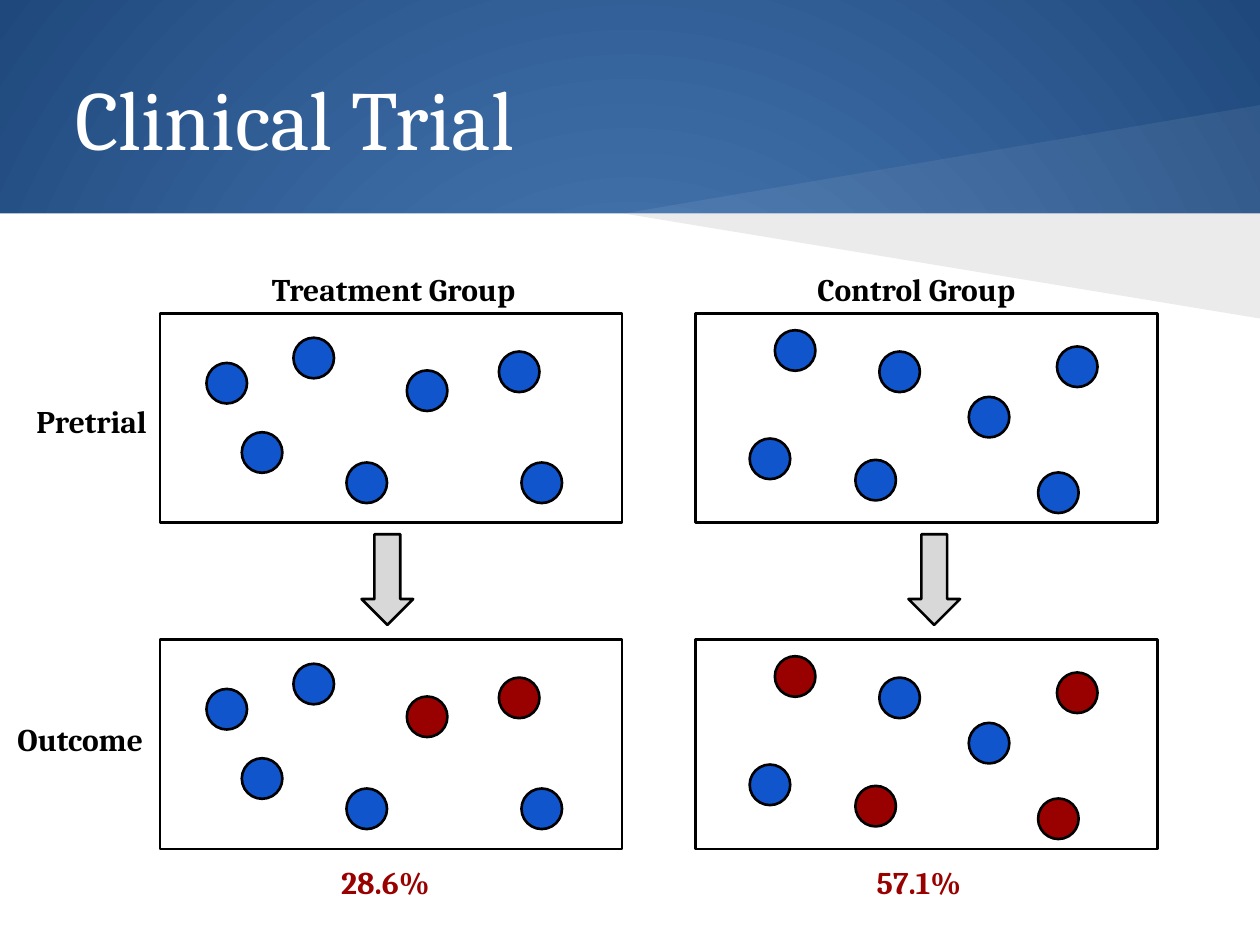
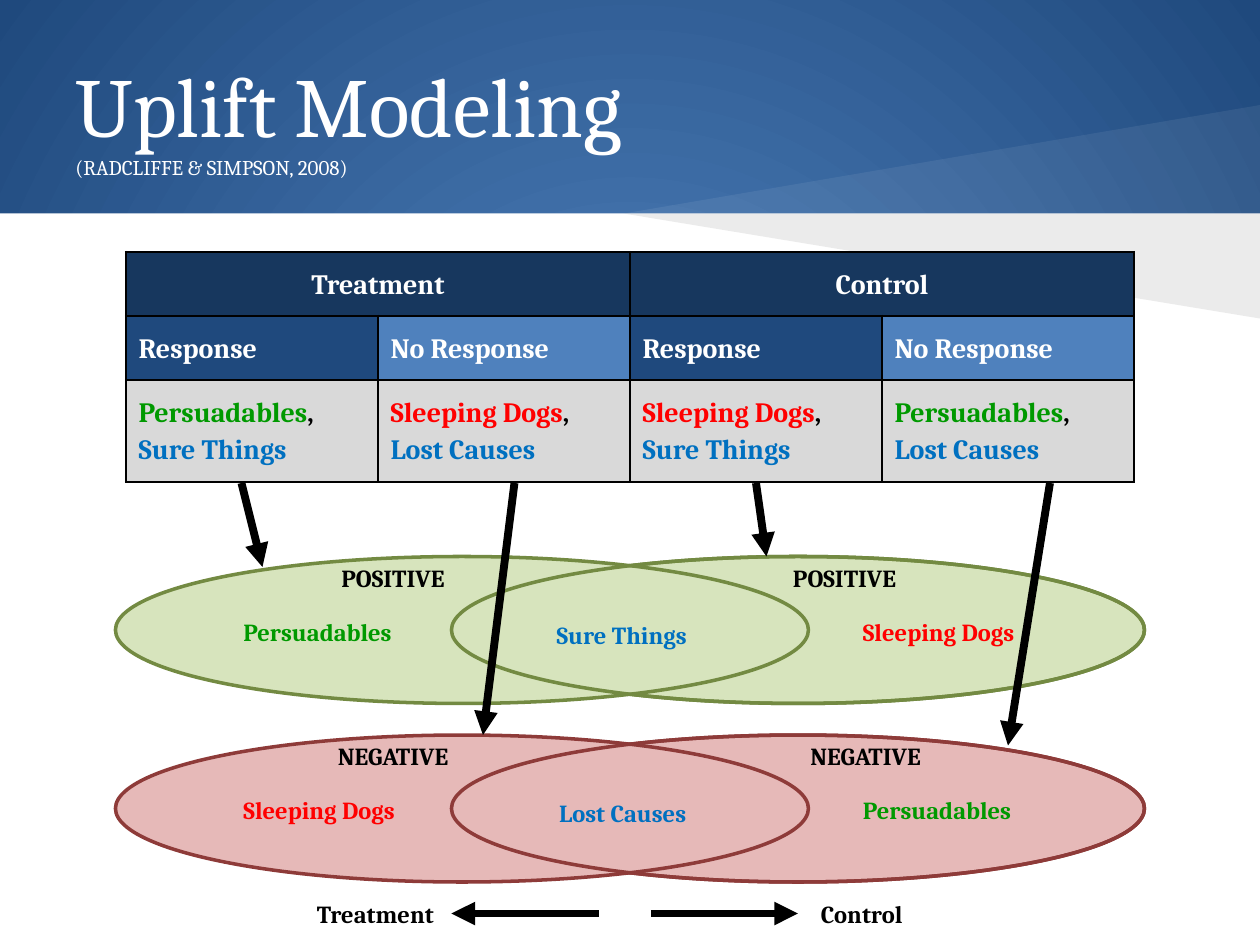
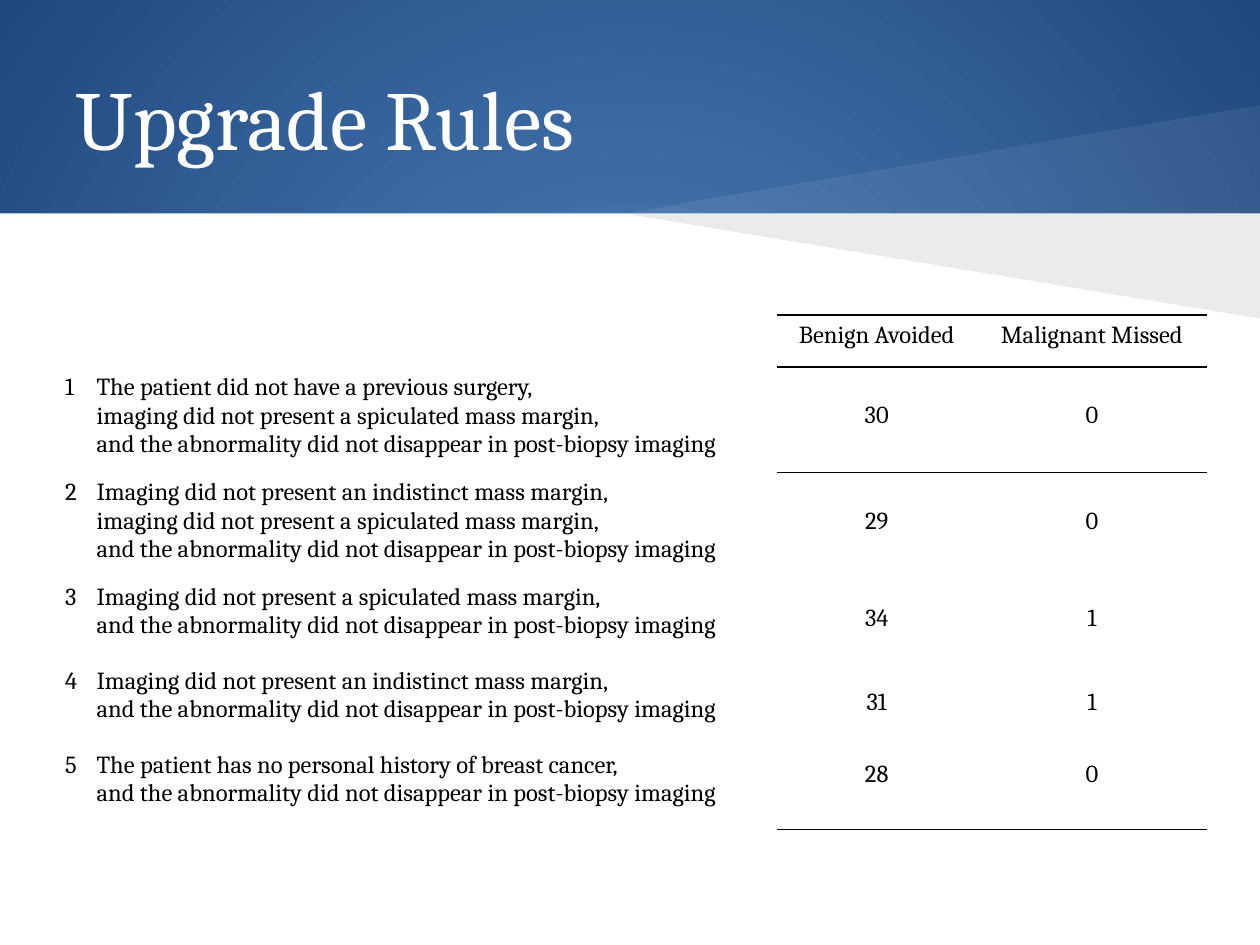
from dataclasses import dataclass

from lxml.etree import SubElement
from pptx import Presentation
from pptx.dml.color import RGBColor
from pptx.enum.shapes import MSO_CONNECTOR as Connector, MSO_SHAPE as Shape
from pptx.enum.text import MSO_ANCHOR as Anchor, PP_ALIGN as Align
from pptx.oxml.ns import qn
from pptx.util import Pt


@dataclass(frozen=True)
class Theme:
    font: str = "Cambria"
    # Type sizes
    title: int = 48
    citation: int = 12
    heading: int = 18
    table: int = 16
    body: int = 14
    # Colours
    white: str = "FFFFFF"
    black: str = "000000"
    light_blue: str = "4F81BD"
    dark_blue: str = "1F497D"
    navy: str = "17375E"
    pale_gray: str = "D9D9D9"
    arrow_gray: str = "D8D8D8"
    healthy: str = "1155CC"
    sick: str = "990000"
    green: str = "009900"
    red: str = "FF0000"
    blue: str = "0070C0"
    positive_fill: str = "D7E4BD"
    positive_line: str = "738A42"
    negative_fill: str = "E6B9B8"
    negative_line: str = "8E3B39"


T = Theme()
WIDTH, HEIGHT = 720, 540
BAND_BOTTOM = 122
NO_STYLE = "{2D5ABB26-0587-4C30-8999-92F81FD0307C}"


def rgb(color):
    return RGBColor.from_string(color)


def points(values):
    return [Pt(value) for value in values]


# Text: lines are split at "\n" or listed; a line may be a list of (text, colour) runs
def write(frame, text, size=T.body, color=T.black, bold=False,
          align=Align.LEFT, spacing=None):
    lines = text.split("\n") if isinstance(text, str) else text
    for index, line in enumerate(lines):
        paragraph = frame.paragraphs[0] if index == 0 else frame.add_paragraph()
        paragraph.alignment = align
        if spacing:
            paragraph.line_spacing = spacing
        runs = [(line, color)] if isinstance(line, str) else line
        for words, run_color in runs:
            run = paragraph.add_run()
            run.text = words
            run.font.name = T.font
            run.font.size = Pt(size)
            run.font.bold = bold
            run.font.color.rgb = rgb(run_color)


def add_text(slide, text, at, inset=3.6, anchor=Anchor.TOP, **style):
    frame = slide.shapes.add_textbox(*points(at)).text_frame
    frame.word_wrap = True
    frame.vertical_anchor = anchor
    frame.margin_top = frame.margin_bottom = Pt(inset)
    write(frame, text, **style)
    return frame


# Shapes and lines
def paint(shape, fill=None, line=None, width=1.5, alpha=None):
    shape.shadow.inherit = False
    if fill:
        shape.fill.solid()
        shape.fill.fore_color.rgb = rgb(fill)
    else:
        shape.fill.background()
    if alpha:
        color = shape.element.spPr.find(qn("a:solidFill"))[0]
        SubElement(color, qn("a:alpha"), val=str(alpha * 1000))
    if line:
        shape.line.color.rgb = rgb(line)
        shape.line.width = Pt(width)
    else:
        shape.line.fill.background()


def add_shape(slide, kind, at, fill=None, line=None, width=1.5):
    paint(slide.shapes.add_shape(kind, *points(at)), fill, line, width)


def add_wedge(slide, tip, far_y, fill, alpha):
    builder = slide.shapes.build_freeform(*points(tip))
    corners = [(WIDTH, far_y), (WIDTH, tip[1])]
    builder.add_line_segments([points(corner) for corner in corners])
    paint(builder.convert_to_shape(), fill, alpha=alpha)


def add_arrow(slide, start, end):
    arrow = slide.shapes.add_connector(Connector.STRAIGHT, *points(start + end))
    arrow.line.color.rgb = rgb(T.black)
    arrow.line.width = Pt(4.5)
    properties = arrow.element.spPr
    SubElement(properties.find(qn("a:ln")), qn("a:tailEnd"), type="triangle")
    SubElement(properties, qn("a:effectLst"))


# Tables
def add_table(slide, left, top, widths, heights):
    frame = slide.shapes.add_table(len(heights), len(widths), *points(
        (left, top, sum(widths), sum(heights))))
    frame.element.find(".//" + qn("a:tableStyleId")).text = NO_STYLE
    table = frame.table
    table.first_row = table.horz_banding = False
    for column, width in zip(table.columns, widths):
        column.width = Pt(width)
    for row, height in zip(table.rows, heights):
        row.height = Pt(height)
    return table


def fill_cell(cell, text, fill=None, borders="", width=1, top=3.6, bottom=3.6, **style):
    cell.margin_top, cell.margin_bottom = Pt(top), Pt(bottom)
    properties = cell._tc.get_or_add_tcPr()
    for side in borders:
        edge = SubElement(properties, qn("a:ln" + side), w=str(Pt(width)))
        SubElement(SubElement(edge, qn("a:solidFill")), qn("a:srgbClr"), val=T.black)
    if fill:
        cell.fill.solid()
        cell.fill.fore_color.rgb = rgb(fill)
    else:
        cell.fill.background()
    if text:
        write(cell.text_frame, text, **style)


# Shared background, band and title
def set_background(master):
    fill = master.background.fill
    fill.gradient()
    for stop, color in zip(fill.gradient_stops, (T.light_blue, T.dark_blue)):
        stop.color.rgb = rgb(color)
    gradient = master.element.find(".//" + qn("a:gradFill"))
    gradient.remove(gradient.find(qn("a:lin")))
    circle = SubElement(gradient, qn("a:path"), path="circle")
    SubElement(circle, qn("a:fillToRect"), l="50000", t="50000", r="50000", b="50000")


def add_slide(deck, title, citation=None):
    slide = deck.slides.add_slide(deck.slide_layouts[6])
    add_shape(slide, Shape.RECTANGLE, (0, BAND_BOTTOM, WIDTH, HEIGHT - BAND_BOTTOM), T.white)
    tip = (356.4, BAND_BOTTOM)
    add_wedge(slide, tip, 60, T.white, alpha=7)
    add_wedge(slide, tip, 182, T.black, alpha=8)
    lines = [title, citation] if citation else title
    heading = add_text(slide, lines, (36, 21.6, 648, 90), inset=7.2,
                       anchor=Anchor.MIDDLE, size=T.title, color=T.white)
    if citation:
        heading.paragraphs[1].runs[0].font.size = Pt(T.citation)
    return slide


# Clinical trial
PANEL_TOPS = (179.3, 365.6)
PANEL_SIZE = (264.2, 119.5)
DOT = 23.2
GROUPS = [
    # heading, its left and width, panel left, arrow left, rate, rate left, dots, sick dots
    ("Treatment Group", 148.3, 170, 91.4, 206.6, "28.6%", 187.9,
     [(46.8, 67.7), (76.3, 13.7), (106.6, 85), (206.6, 85),
      (141.1, 32.4), (193.7, 21.6), (26.6, 28.1)], {4, 5}),
    ("Control Group", 460, 157, 397.4, 519.1, "57.1%", 493.9,
     [(105.1, 21.6), (91.4, 83.5), (195.8, 90.7), (156.2, 47.5),
      (206.6, 18.7), (45.4, 9.4), (31, 71.3)], {1, 2, 4, 5}),
]


def add_panel(slide, left, top, dots, sick):
    add_shape(slide, Shape.RECTANGLE, (left, top, *PANEL_SIZE), T.white, T.black)
    for index, (x, y) in enumerate(dots):
        color = T.sick if index in sick else T.healthy
        add_shape(slide, Shape.OVAL, (left + x, top + y, DOT, DOT), color, T.black)


def build_clinical_trial(deck):
    slide = add_slide(deck, "Clinical Trial")
    style = dict(inset=7.2, size=T.heading, bold=True)
    pretrial_top, outcome_top = PANEL_TOPS
    for (heading, heading_left, heading_width, left, arrow_left,
         rate, rate_left, dots, sick) in GROUPS:
        add_text(slide, heading, (heading_left, 146.9, heading_width, 27.4), **style)
        add_panel(slide, left, pretrial_top, dots, set())
        add_shape(slide, Shape.DOWN_ARROW, (arrow_left, 305.3, 29.5, 51.8),
                  T.arrow_gray, T.black)
        add_panel(slide, left, outcome_top, dots, sick)
        add_text(slide, rate, (rate_left, 486, 92, 41), color=T.sick, **style)
    add_text(slide, "Pretrial", (13.7, 222.5, 92, 41), **style)
    add_text(slide, "Outcome", (2.9, 404, 101, 41), **style)


# Uplift modeling
PERSUADABLES = ("Persuadables", T.green)
SLEEPING_DOGS = ("Sleeping Dogs", T.red)
SURE_THINGS = ("Sure Things", T.blue)
LOST_CAUSES = ("Lost Causes", T.blue)


def add_response_table(slide):
    table = add_table(slide, 72, 144, [144] * 4, [31.7, 31.7, 50.4])
    style = dict(borders="LRTB", width=1.5, top=7.2, bottom=7.2,
                 size=T.table, bold=True, spacing=1.15)
    segments = [(PERSUADABLES, SURE_THINGS), (SLEEPING_DOGS, LOST_CAUSES),
                (SLEEPING_DOGS, SURE_THINGS), (PERSUADABLES, LOST_CAUSES)]
    groups = ("Treatment", "", "Control", "")
    responses = [("Response", T.dark_blue), ("No Response", T.light_blue)] * 2
    for column, (affected, unaffected) in enumerate(segments):
        fill_cell(table.cell(0, column), groups[column], T.navy,
                  color=T.white, align=Align.CENTER, **style)
        response, fill = responses[column]
        fill_cell(table.cell(1, column), response, fill, color=T.white, **style)
        fill_cell(table.cell(2, column), [[affected, (",", T.black)], [unaffected]],
                  T.pale_gray, **style)
    for column in (0, 2):
        table.cell(0, column).merge(table.cell(0, column + 1))


def add_venn(slide, top, fill, line, sign, sign_lefts, left_group, shared, right_group,
             shared_left):
    left_oval, right_oval = (66, top, 396, 84), (258, top, 396, 84)
    for at, color in ((right_oval, fill), (left_oval, fill), (right_oval, None)):
        add_shape(slide, Shape.OVAL, at, color, line, 2)
    for left in sign_lefts:
        add_text(slide, sign, (left, top, 82, 24.5), bold=True)
    for (name, color), left in ((left_group, 132), (right_group, 486)):
        add_text(slide, name, (left, top + 31, 115, 24.5), color=color, bold=True)
    name, color = shared
    add_text(slide, name, (shared_left, top + 30, 103, 26), color=color,
             bold=True, spacing=1.15)


def build_uplift_modeling(deck):
    slide = add_slide(deck, "Uplift Modeling", "(RADCLIFFE & SIMPSON, 2008)")
    add_response_table(slide)
    add_venn(slide, 318, T.positive_fill, T.positive_line, "POSITIVE", (188, 446),
             PERSUADABLES, SURE_THINGS, SLEEPING_DOGS, 311)
    add_venn(slide, 420, T.negative_fill, T.negative_line, "NEGATIVE", (186, 456),
             SLEEPING_DOGS, LOST_CAUSES, PERSUADABLES, 312.4)
    # Arrows from the table columns to the ovals
    for start_x, end in ((138, (150, 324)), (432, (438, 318)),
                         (294, (276, 420)), (600, (576, 426))):
        add_arrow(slide, (start_x, 276), end)
    # Legend for the two sides
    for group, left, start_x, end_x in (("Treatment", 174, 342, 258),
                                        ("Control", 462, 372, 456)):
        add_text(slide, group, (left, 510, 90, 24.5), bold=True)
        add_arrow(slide, (start_x, 522), (end_x, 522))


# Upgrade rules
NO_SPICULATED = "maging did not present a spiculated mass margin,"
NO_INDISTINCT = "Imaging did not present an indistinct mass margin,"
STAYED = "and the abnormality did not disappear in post-biopsy imaging"
RULES = [
    # conditions, benign avoided, malignant missed
    (["The patient did not have a previous surgery,", "i" + NO_SPICULATED, STAYED], 30, 0),
    ([NO_INDISTINCT, "i" + NO_SPICULATED, STAYED], 29, 0),
    (["I" + NO_SPICULATED, STAYED], 34, 1),
    ([NO_INDISTINCT, STAYED], 31, 1),
    (["The patient has no personal history of breast cancer,", STAYED], 28, 0),
]


def build_upgrade_rules(deck):
    slide = add_slide(deck, "Upgrade Rules")
    rules = add_table(slide, 30, 210, [18, 414], [60, 60, 48, 48, 48])
    results = add_table(slide, 444, 180, [114, 132], [29.6, 60.4, 72, 48, 41, 43])
    for column, heading in enumerate(("Benign Avoided", "Malignant Missed")):
        fill_cell(results.cell(0, column), heading, borders="TB", align=Align.CENTER)
    for row, (conditions, *counts) in enumerate(RULES):
        fill_cell(rules.cell(row, 0), str(row + 1))
        fill_cell(rules.cell(row, 1), conditions)
        edges = {0: "T", len(RULES) - 1: "B"}.get(row, "")
        drop = 20 if len(conditions) == 3 else 3.6
        for column, count in enumerate(counts):
            fill_cell(results.cell(row + 1, column), str(count), borders=edges,
                      top=drop, align=Align.CENTER)


def main():
    deck = Presentation()
    deck.slide_width, deck.slide_height = Pt(WIDTH), Pt(HEIGHT)
    set_background(deck.slide_master)
    build_clinical_trial(deck)
    build_uplift_modeling(deck)
    build_upgrade_rules(deck)
    deck.save("out.pptx")


if __name__ == "__main__":
    main()
